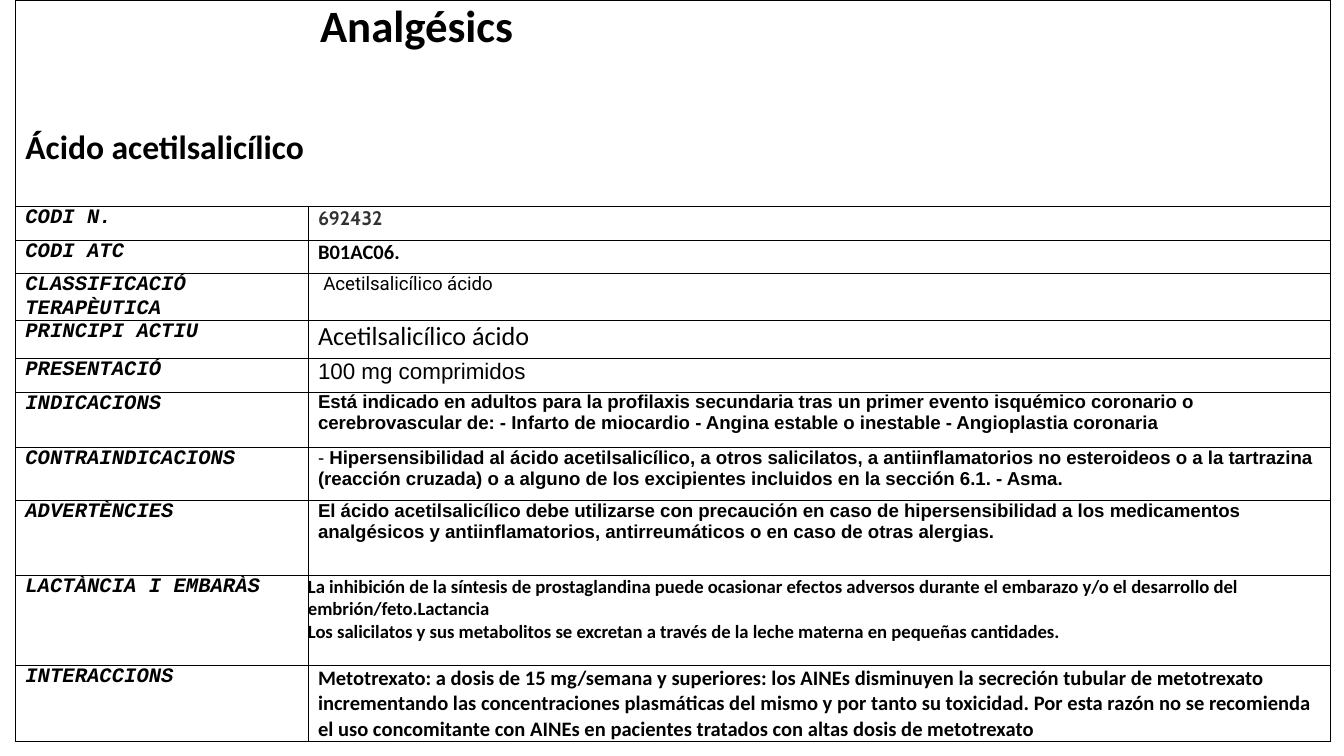
import pptx
import pptx.dml.color
import pptx.oxml
import pptx.oxml.ns
import pptx.util
from collections import namedtuple
from dataclasses import dataclass

Cm, Pt = pptx.util.Cm, pptx.util.Pt
Color = pptx.dml.color.RGBColor
Style = namedtuple("Style", "font size bold italic color")


@dataclass(frozen=True)
class Theme:
    ink: str = "000000"
    paper: str = "FFFFFF"
    border: float = 0.5
    title: Style = Style("Calibri", 24, True, False, "000000")
    subtitle: Style = Style("Calibri", 18, True, False, "000000")
    label: Style = Style("Courier New", 11, True, True, "000000")
    code: Style = Style("Cabin", 10.5, True, False, "333333")
    strong: Style = Style("Calibri", 11, True, False, "000000")
    group: Style = Style("Roboto", 10, False, False, "000000")
    active: Style = Style("Calibri", 14, False, False, "000000")
    pack: Style = Style("Arial", 12, False, False, "000000")
    body: Style = Style("Arial", 10, True, False, "000000")
    note: Style = Style("Calibri", 10, True, False, "000000")


THEME = Theme()


def write(cell, lines, style):
    """Fill a cell with one paragraph per line, all in one style."""
    cell.text_frame.text = "\n".join(lines)
    for para in cell.text_frame.paragraphs:
        apply_style(para, style)


def apply_style(para, style):
    font = para.font
    font.name, font.size = style.font, Pt(style.size)
    font.bold, font.italic = style.bold, style.italic
    font.color.rgb = Color.from_string(style.color)


# Row height in cm, label, lines of text, style
rows = [
    (0.64, "CODI N.", ["692432"], THEME.code),
    (0.63, "CODI ATC", ["B01AC06."], THEME.strong),
    (0.89, "CLASSIFICACIÓ TERAPÈUTICA", ["Acetilsalicílico ácido"], THEME.group),
    (0.72, "PRINCIPI ACTIU", ["Acetilsalicílico ácido"], THEME.active),
    (0.63, "PRESENTACIÓ", ["100 mg comprimidos"], THEME.pack),
    (1.05, "INDICACIONS", [
        "Está indicado en adultos para la profilaxis secundaria tras un primer evento "
        "isquémico coronario o cerebrovascular de: - Infarto de miocardio - Angina "
        "estable o inestable - Angioplastia coronaria"], THEME.body),
    (1.0, "CONTRAINDICACIONS", [
        "Hipersensibilidad al ácido acetilsalicílico, a otros salicilatos, a "
        "antiinflamatorios no esteroideos o a la tartrazina (reacción cruzada) o a "
        "alguno de los excipientes incluidos en la sección 6.1. - Asma."], THEME.body),
    (1.42, "ADVERTÈNCIES", [
        "El ácido acetilsalicílico debe utilizarse con precaución en caso de "
        "hipersensibilidad a los medicamentos",
        "analgésicos y antiinflamatorios, antirreumáticos o en caso de otras alergias."],
        THEME.body),
    (1.7, "LACTÀNCIA I EMBARÀS", [
        "La inhibición de la síntesis de prostaglandina puede ocasionar efectos adversos "
        "durante el embarazo y/o el desarrollo del embrión/feto.Lactancia",
        "Los salicilatos y sus metabolitos se excretan a través de la leche materna en "
        "pequeñas cantidades."], THEME.note),
    (1.44, "INTERACCIONS", [
        "Metotrexato: a dosis de 15 mg/semana y superiores: los AINEs disminuyen la "
        "secreción tubular de metotrexato incrementando las concentraciones plasmáticas "
        "del mismo y por tanto su toxicidad. Por esta razón no se recomienda el uso "
        "concomitante con AINEs en pacientes tratados con altas dosis de metotrexato"],
        THEME.strong),
]
header_height = 3.9
label_width, text_width = 5.53, 19.33

deck = pptx.Presentation()
deck.slide_width, deck.slide_height = Cm(25.4), Cm(14.29)
page = deck.slides.add_slide(deck.slide_layouts[6])

height = header_height + sum(row[0] for row in rows)
table = page.shapes.add_table(
    len(rows) + 1, 2, Cm(0.29), Cm(0), Cm(label_width + text_width), Cm(height)).table
table.first_row = table.horz_banding = False
table.columns[0].width, table.columns[1].width = Cm(label_width), Cm(text_width)

# Margins, borders and fill of every cell
for cell in table.iter_cells():
    cell.margin_left = cell.margin_right = Cm(0.19)
    cell.margin_top = cell.margin_bottom = 0
    properties = cell._tc.get_or_add_tcPr()
    for side in ("lnL", "lnR", "lnT", "lnB"):
        properties.append(pptx.oxml.parse_xml(
            f'<a:{side} {pptx.oxml.ns.nsdecls("a")} w="{Pt(THEME.border)}">'
            f'<a:solidFill><a:srgbClr val="{THEME.ink}"/></a:solidFill></a:{side}>'))
    cell.fill.solid()
    cell.fill.fore_color.rgb = Color.from_string(THEME.paper)

# Heading across both columns
table.rows[0].height = Cm(header_height)
heading = table.cell(0, 0)
heading.merge(table.cell(0, 1))
write(heading, ["Analgésics", "Ácido acetilsalicílico"], THEME.title)
title, subtitle = heading.text_frame.paragraphs
title._p.get_or_add_pPr().set("marL", str(Cm(5.57)))
apply_style(subtitle, THEME.subtitle)
subtitle.space_before = Pt(39)

# One row per property of the medicine
cells = {}
for index, (row_height, label, lines, style) in enumerate(rows, start=1):
    table.rows[index].height = Cm(row_height)
    write(table.cell(index, 0), [label], THEME.label)
    cells[label] = table.cell(index, 1)
    write(cells[label], lines, style)

cells["LACTÀNCIA I EMBARÀS"].margin_left = 0
group = cells["CLASSIFICACIÓ TERAPÈUTICA"].text_frame.paragraphs[0]
group._p.get_or_add_pPr().set("marL", str(Cm(0.1)))

# The opening dash of the contraindications is not bold
warning = cells["CONTRAINDICACIONS"].text_frame.paragraphs[0]
sentence = warning.runs[0].text
warning.runs[0].text = "- "
warning.runs[0].font.bold = False
span = warning.add_run()
span.text = sentence

deck.save("out.pptx")
